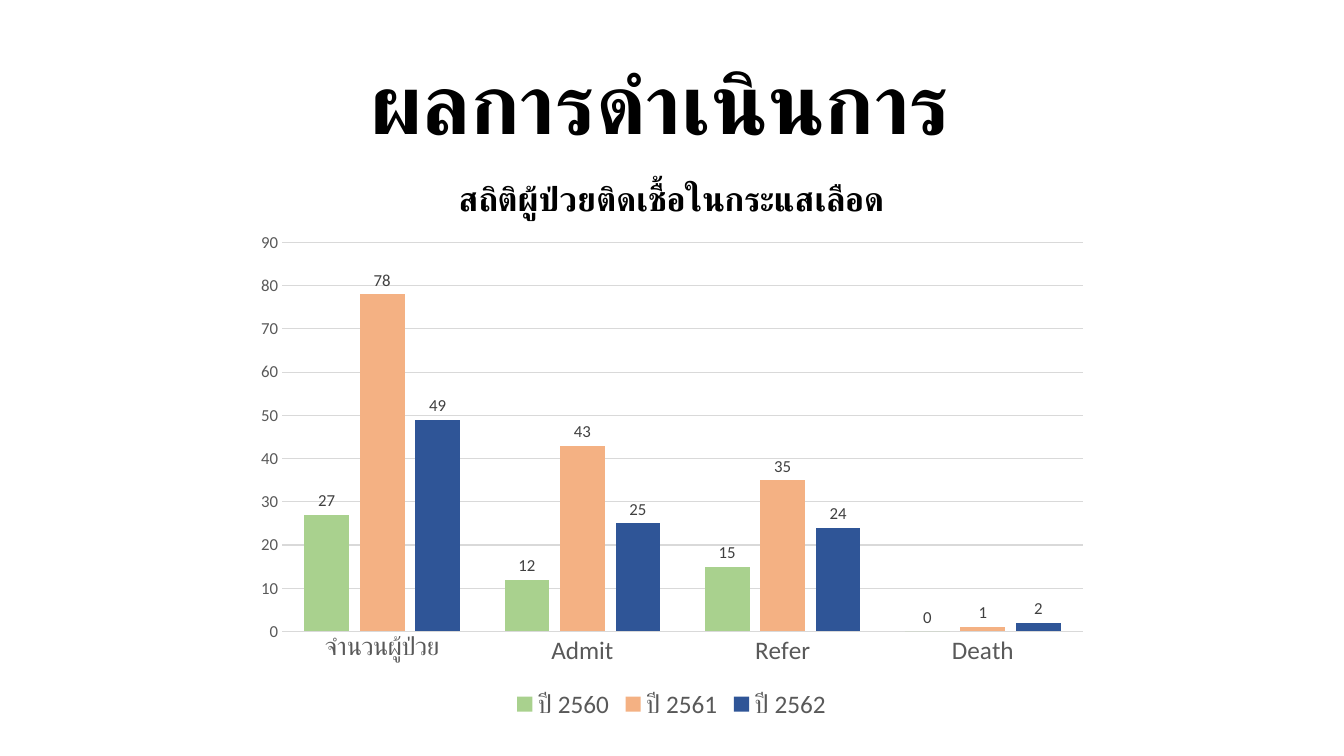
from dataclasses import dataclass

from lxml.etree import SubElement
from pptx import Presentation
from pptx.chart.data import CategoryChartData
from pptx.dml.color import RGBColor
from pptx.enum.chart import XL_CHART_TYPE as ChartType
from pptx.enum.chart import XL_LABEL_POSITION as LabelPosition
from pptx.enum.chart import XL_LEGEND_POSITION as LegendPosition
from pptx.enum.chart import XL_TICK_MARK as TickMark
from pptx.enum.text import MSO_AUTO_SIZE as AutoSize
from pptx.enum.text import PP_ALIGN as Align
from pptx.oxml.ns import qn
from pptx.util import Emu, Pt

EMU_PER_PX = 9525


@dataclass(frozen=True)
class Theme:
    """Colours, fonts and type sizes of the slide."""

    ink: str = "000000"
    axis_text: str = "595959"
    label_text: str = "404040"
    rule: str = "D9D9D9"
    series: tuple = ("A9D18E", "F4B183", "2F5597")
    heading_font: str = "Lato"
    chart_font: str = "Calibri"
    heading_size: int = 60
    chart_title_size: int = 24
    category_size: int = 18
    value_size: int = 12
    base_size: int = 10


THEME = Theme()
CATEGORIES = ("จำนวนผู้ป่วย", "Admit", "Refer", "Death")
PATIENTS_BY_YEAR = {
    "ปี 2560": (27, 12, 15, 0),
    "ปี 2561": (78, 43, 35, 1),
    "ปี 2562": (49, 25, 24, 2),
}


def px(*lengths):
    """Turn pixel lengths into a list of EMU lengths."""
    return [Emu(length * EMU_PER_PX) for length in lengths]


def style_font(font, name, size, color, bold=False):
    """Set the face, size, colour and weight of a font."""
    font.name = name
    font.size = Pt(size)
    font.bold = bold
    font.color.rgb = RGBColor.from_string(color)


def style_line(line, color, width):
    """Give a line a colour and a width in points."""
    line.color.rgb = RGBColor.from_string(color)
    line.width = Pt(width)


def add_heading(slide, text, box):
    """Add the centred slide heading."""
    frame = slide.shapes.add_textbox(*px(*box)).text_frame
    frame.word_wrap = True
    frame.auto_size = AutoSize.SHAPE_TO_FIT_TEXT
    paragraph = frame.paragraphs[0]
    paragraph.alignment = Align.CENTER
    run = paragraph.add_run()
    run.text = text
    style_font(run.font, THEME.heading_font, THEME.heading_size, THEME.ink, True)


def set_plot_layout(chart, **fractions):
    """Fix the inner plot area as fractions of the chart."""
    plot_area = chart.plots[0]._element.getparent()
    for layout in plot_area.findall(qn("c:layout")):
        plot_area.remove(layout)
    layout = plot_area.makeelement(qn("c:layout"))
    plot_area.insert(0, layout)
    manual = SubElement(layout, qn("c:manualLayout"))
    settings = {"layoutTarget": "inner", "xMode": "edge", "yMode": "edge"}
    for tag, value in (settings | fractions).items():
        SubElement(manual, qn(f"c:{tag}")).set("val", str(value))


def style_chart_title(chart, text):
    """Write the title above the plot."""
    chart.has_title = True
    chart.chart_title.include_in_layout = False
    run = chart.chart_title.text_frame.paragraphs[0].add_run()
    run.text = text
    style_font(run.font, THEME.chart_font, THEME.chart_title_size, THEME.ink, True)


def style_axes(chart):
    """Style both axes and the gridlines."""
    sizes = (
        (chart.category_axis, THEME.category_size),
        (chart.value_axis, THEME.value_size),
    )
    for axis, size in sizes:
        axis.major_tick_mark = axis.minor_tick_mark = TickMark.NONE
        style_font(axis.tick_labels.font, THEME.chart_font, size, THEME.axis_text)
    style_line(chart.category_axis.format.line, THEME.rule, 1)
    values = chart.value_axis
    values.minimum_scale, values.maximum_scale, values.major_unit = 0, 90, 10
    values.format.line.fill.background()
    values.has_major_gridlines = True
    style_line(values.major_gridlines.format.line, THEME.rule, 0.75)


def style_series(series, color):
    """Colour one series and label its columns."""
    series.format.fill.solid()
    series.format.fill.fore_color.rgb = RGBColor.from_string(color)
    labels = series.data_labels
    labels.show_value = True
    labels.position = LabelPosition.OUTSIDE_END
    style_font(labels.font, THEME.chart_font, THEME.value_size, THEME.label_text)


def style_legend(chart):
    """Place the legend under the plot."""
    chart.has_legend = True
    chart.legend.position = LegendPosition.BOTTOM
    chart.legend.include_in_layout = False
    style_font(
        chart.legend.font, THEME.chart_font, THEME.category_size, THEME.axis_text
    )


def add_patient_chart(slide, title, box):
    """Add the clustered columns of patients by year."""
    data = CategoryChartData()
    data.categories = CATEGORIES
    for year, counts in PATIENTS_BY_YEAR.items():
        data.add_series(year, counts)
    chart = slide.shapes.add_chart(ChartType.COLUMN_CLUSTERED, *px(*box), data).chart
    style_font(chart.font, THEME.chart_font, THEME.base_size, THEME.ink)
    style_chart_title(chart, title)
    style_axes(chart)
    style_legend(chart)
    plot = chart.plots[0]
    plot.gap_width = 100
    plot.overlap = -24
    plot.vary_by_categories = False
    for series, color in zip(plot.series, THEME.series):
        style_series(series, color)
    set_plot_layout(chart, x=0.045, y=0.15, w=0.936, h=0.686)


def main():
    """Build and save the slide."""
    presentation = Presentation()
    presentation.slide_width, presentation.slide_height = px(1280, 720)
    slide = presentation.slides.add_slide(presentation.slide_layouts[6])
    add_heading(slide, "ผลการดำเนินการ ", (0, 43, 1280, 107))
    add_patient_chart(slide, "สถิติผู้ป่วยติดเชื้อในกระแสเลือด", (232, 150, 815, 540))
    presentation.save("out.pptx")


if __name__ == "__main__":
    main()
